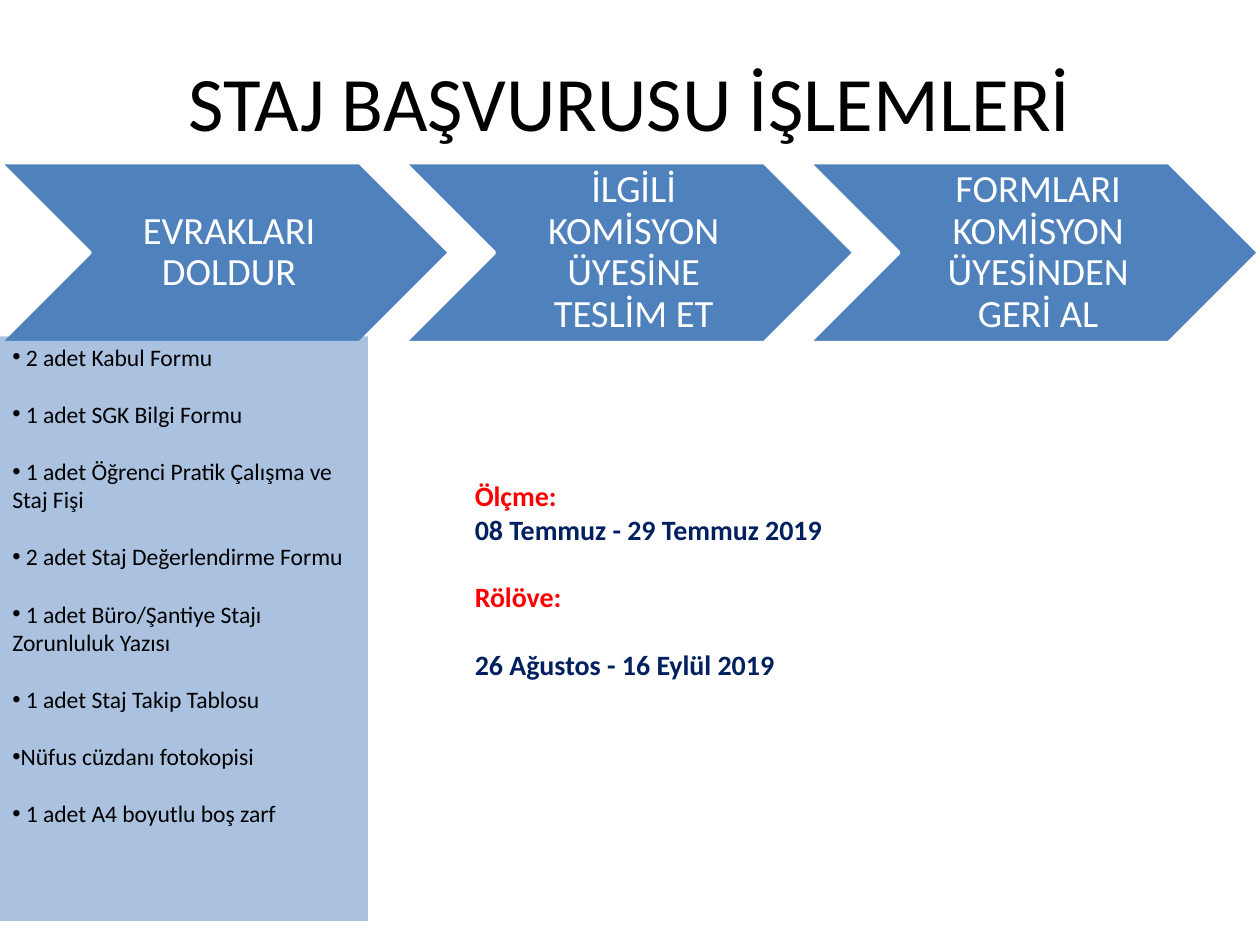
from dataclasses import dataclass

from lxml import etree
from pptx import Presentation
from pptx.dml.color import RGBColor
from pptx.enum.shapes import MSO_SHAPE
from pptx.enum.text import MSO_ANCHOR, PP_ALIGN
from pptx.oxml.ns import qn
from pptx.util import Inches, Pt

CHEVRON = MSO_SHAPE.CHEVRON
RECTANGLE = MSO_SHAPE.RECTANGLE
TOP = MSO_ANCHOR.TOP
MIDDLE = MSO_ANCHOR.MIDDLE
LEFT = PP_ALIGN.LEFT
CENTER = PP_ALIGN.CENTER

FONT = "Calibri"
BLUE = "4F81BD"
NAVY = "002060"
RED = "FF0000"
WHITE = "FFFFFF"
BLACK = "000000"
LINE_HEIGHT = 1.22
STEP_PITCH = 3.21


@dataclass
class Line:
    """One paragraph with its look and the gap below it in points."""

    text: str
    size: float
    color: str
    bold: bool = False
    align: PP_ALIGN = LEFT
    spacing: float = 1.0
    gap: float = 0
    bullet: bool = False


@dataclass
class Box:
    """A rectangle on the slide in inches."""

    left: float
    top: float
    width: float
    height: float

    def lengths(self) -> list:
        """Return the position and size as lengths."""
        return [Inches(value) for value in (self.left, self.top, self.width, self.height)]


STEPS = [
    "EVRAKLARI DOLDUR",
    "İLGİLİ KOMİSYON ÜYESİNE TESLİM ET",
    "FORMLARI KOMİSYON ÜYESİNDEN GERİ AL",
]
DOCUMENTS = [
    " 2 adet Kabul Formu",
    " 1 adet SGK Bilgi Formu",
    " 1 adet Öğrenci Pratik Çalışma ve Staj Fişi",
    " 2 adet Staj Değerlendirme Formu",
    " 1 adet Büro/Şantiye Stajı Zorunluluk Yazısı",
    " 1 adet Staj Takip Tablosu",
    "Nüfus cüzdanı fotokopisi",
    " 1 adet A4 boyutlu boş zarf",
]
DATES = [
    Line("Ölçme:", 16, RED, bold=True),
    Line("08 Temmuz - 29 Temmuz 2019", 16, NAVY, bold=True, gap=16 * LINE_HEIGHT),
    Line("Rölöve:", 16, RED, bold=True, gap=16 * LINE_HEIGHT),
    Line("26 Ağustos - 16 Eylül 2019", 16, NAVY, bold=True),
]


def rgb(color: str) -> RGBColor:
    """Turn a hex string into a colour."""
    return RGBColor.from_string(color)


def write(shape, lines: list[Line], anchor: MSO_ANCHOR) -> None:
    """Fill a shape with paragraphs."""
    frame = shape.text_frame
    frame.word_wrap = True
    frame.vertical_anchor = anchor
    for index, line in enumerate(lines):
        paragraph = frame.add_paragraph() if index else frame.paragraphs[0]
        paragraph.alignment = line.align
        paragraph.line_spacing = line.spacing
        paragraph.space_after = Pt(line.gap)
        if line.bullet:
            properties = paragraph._p.get_or_add_pPr()
            etree.SubElement(properties, qn("a:buFont"), typeface="Arial")
            etree.SubElement(properties, qn("a:buChar"), char="•")
        run = paragraph.add_run()
        run.text = line.text
        run.font.name = FONT
        run.font.size = Pt(line.size)
        run.font.bold = line.bold
        run.font.color.rgb = rgb(line.color)


def add_text(slide, box: Box, lines: list[Line], anchor: MSO_ANCHOR = TOP) -> None:
    """Add a text box."""
    write(slide.shapes.add_textbox(*box.lengths()), lines, anchor)


def add_step(slide, index: int, text: str) -> None:
    """Add one chevron of the process."""
    box = Box(index * STEP_PITCH, 1.29, 3.57, 1.43)
    shape = slide.shapes.add_shape(CHEVRON, *box.lengths())
    shape.shadow.inherit = False
    shape.fill.solid()
    shape.fill.fore_color.rgb = rgb(BLUE)
    shape.line.color.rgb = rgb(WHITE)
    shape.line.width = Pt(2)
    frame = shape.text_frame
    frame.margin_left = Inches(0.1)
    frame.margin_top = frame.margin_right = frame.margin_bottom = Inches(0.03)
    write(shape, [Line(text, 22, WHITE, align=CENTER, spacing=0.9)], MIDDLE)


def add_document_panel(slide) -> None:
    """Add the translucent panel that lists the documents."""
    shape = slide.shapes.add_shape(RECTANGLE, *Box(0, 2.67, 2.92, 4.64).lengths())
    shape.shadow.inherit = False
    shape.fill.solid()
    shape.fill.fore_color.rgb = rgb(BLUE)
    color = shape._element.spPr.find(qn("a:solidFill"))[0]
    etree.SubElement(color, qn("a:alpha"), val="48000")
    shape.line.fill.background()
    gap = 13.5 * LINE_HEIGHT
    write(shape, [Line(text, 13.5, BLACK, gap=gap, bullet=True) for text in DOCUMENTS], TOP)


def main() -> None:
    """Build and save the slide."""
    presentation = Presentation()
    presentation.slide_width = Inches(10)
    presentation.slide_height = Inches(7.5)
    slide = presentation.slides.add_slide(presentation.slide_layouts[6])
    title = Line("STAJ BAŞVURUSU İŞLEMLERİ", 44, BLACK, align=CENTER)
    add_text(slide, Box(0.5, 0.17, 9, 1.25), [title], MIDDLE)
    for index, text in enumerate(STEPS):
        add_step(slide, index, text)
    add_document_panel(slide)
    add_text(slide, Box(3.67, 3.75, 5.33, 2.26), DATES)
    presentation.save("out.pptx")


if __name__ == "__main__":
    main()
